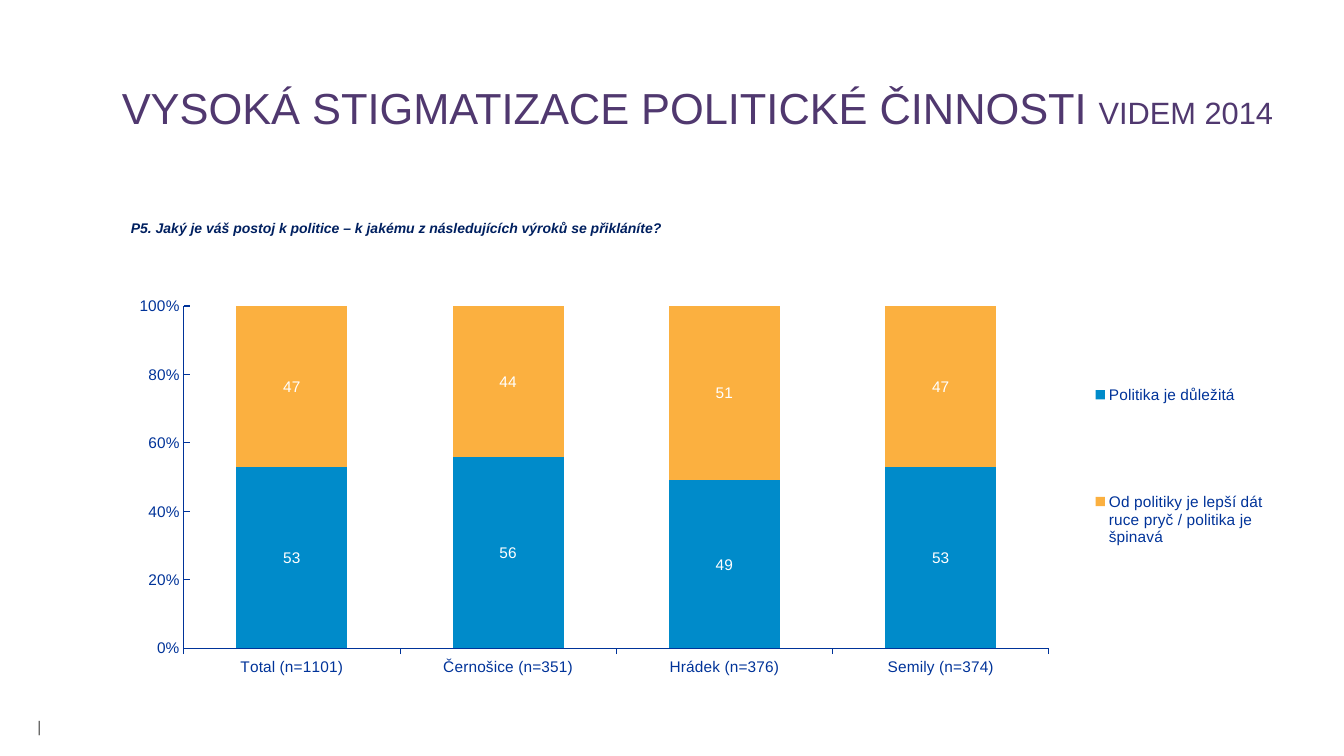
from lxml import etree
from pptx import Presentation
from pptx.chart.data import CategoryChartData
from pptx.dml.color import RGBColor
from pptx.enum.chart import XL_CHART_TYPE, XL_LABEL_POSITION, XL_LEGEND_POSITION, XL_TICK_MARK
from pptx.enum.text import MSO_ANCHOR, MSO_AUTO_SIZE, PP_ALIGN
from pptx.oxml.ns import qn
from pptx.util import Cm, Pt

# Content
TITLE_RUNS = [("VYSOKÁ STIGMATIZACE POLITICKÉ ČINNOSTI ", 31), ("VIDEM 2014", 22)]
QUESTION = "P5. Jaký je váš postoj k politice – k jakému z následujících výroků se přikláníte?"
FOOTER_MARK = "|"
TOWNS = ["Total (n=1101)", "Černošice (n=351)", "Hrádek (n=376)", "Semily (n=374)"]
ATTITUDES = [
    ("Politika je důležitá", [53, 56, 49, 53], "blue"),
    ("Od politiky je lepší dát ruce pryč / politika je špinavá", [47, 44, 51, 47], "orange"),
]

# Style
FONT = "Arial"
COLORS = {
    "title": "50386F", "question": "002060", "axis": "003399", "mark": "575756",
    "label": "FFFFFF", "blue": "008BCA", "orange": "FBB040",
}
LEFT, TOP = PP_ALIGN.LEFT, MSO_ANCHOR.TOP
MIDDLE, NO_FIT = MSO_ANCHOR.MIDDLE, MSO_AUTO_SIZE.NONE
STACKED = XL_CHART_TYPE.COLUMN_STACKED_100
TICK_IN, TICK_OUT = XL_TICK_MARK.INSIDE, XL_TICK_MARK.OUTSIDE
CENTER_LABEL = XL_LABEL_POSITION.CENTER
LEGEND_TOP = XL_LEGEND_POSITION.TOP

# Left, top, width, height in centimetres
TITLE_BOX = (3.07, 1.32, 29.34, 3.61)
QUESTION_BOX = (3.2, 5.54, 29.21, 0.53)
CHART_BOX = (2.54, 5.92, 29.87, 11.2)
MARK_BOX = (0.94, 18.06, 0.1, 0.48)
# Fractions of the chart area
PLOT_AREA = (0.07, 0.16, 0.73, 0.77)
LEGEND_AREA = (0.83, 0.14, 0.16, 0.76)


def rgb(name):
    return RGBColor.from_string(COLORS[name])


def style_font(font, size, color, bold=False, italic=False):
    font.name = FONT
    font.size = Pt(size)
    font.bold = bold
    font.italic = italic
    font.color.rgb = rgb(color)


def place(shape, box):
    shape.left, shape.top, shape.width, shape.height = (Cm(length) for length in box)


def prepare_frame(shape, anchor, margins=(0, 0, 0, 0)):
    frame = shape.text_frame
    frame.auto_size = NO_FIT
    frame.vertical_anchor = anchor
    frame.margin_left, frame.margin_top, frame.margin_right, frame.margin_bottom = (
        Cm(margin) for margin in margins)
    return frame


def set_layout(element, area, index, inner=False):
    """Give a chart part a fixed place inside the chart."""
    for old_layout in element.findall(qn("c:layout")):
        element.remove(old_layout)
    layout = etree.Element(qn("c:layout"))
    manual = etree.SubElement(layout, qn("c:manualLayout"))
    settings = [("layoutTarget", "inner")] if inner else []
    settings += [("xMode", "edge"), ("yMode", "edge")]
    settings += zip("xywh", area)
    for tag, value in settings:
        etree.SubElement(manual, qn("c:" + tag)).set("val", str(value))
    element.insert(index, layout)


def add_title(slide):
    title = slide.shapes.title
    place(title, TITLE_BOX)
    paragraph = prepare_frame(title, MIDDLE, (0, 0, 0, 0.66)).paragraphs[0]
    paragraph.alignment = LEFT
    paragraph.line_spacing = 0.9
    for text, size in TITLE_RUNS:
        run = paragraph.add_run()
        run.text = text
        style_font(run.font, size, "title")


def add_question(slide):
    body = slide.placeholders[1]
    place(body, QUESTION_BOX)
    frame = prepare_frame(body, TOP, (0.1, 0, 0.1, 0.1))
    frame.text = QUESTION
    paragraph = frame.paragraphs[0]
    paragraph.alignment = LEFT
    paragraph.space_before = Pt(0)
    properties = paragraph._p.get_or_add_pPr()
    properties.set("marL", "0")
    properties.set("indent", "0")
    etree.SubElement(properties, qn("a:buNone"))
    style_font(paragraph.runs[0].font, 10, "question", bold=True, italic=True)


def add_attitude_chart(slide):
    data = CategoryChartData(number_format="0")
    data.categories = TOWNS
    for name, values, _ in ATTITUDES:
        data.add_series(name, values)
    chart = slide.shapes.add_chart(STACKED, *(Cm(length) for length in CHART_BOX), data).chart
    style_font(chart.font, 11, "axis")
    chart.has_title = False

    # Columns
    plot = chart.plots[0]
    plot.gap_width = 95
    plot.overlap = 100
    plot.vary_by_categories = False
    for series, (_, _, color) in zip(plot.series, ATTITUDES):
        series.format.fill.solid()
        series.format.fill.fore_color.rgb = rgb(color)
        labels = series.data_labels
        labels.show_value = True
        labels.position = CENTER_LABEL
        labels.number_format = "#,##0"
        labels.number_format_is_linked = False
        style_font(labels.font, 11, "label")

    # Axes
    for axis, tick in ((chart.category_axis, TICK_OUT), (chart.value_axis, TICK_IN)):
        axis.has_major_gridlines = False
        axis.major_tick_mark = tick
        axis.format.line.color.rgb = rgb("axis")
        axis.format.line.width = Pt(0.75)
        style_font(axis.tick_labels.font, 11, "axis")
    value_axis = chart.value_axis
    value_axis.minimum_scale, value_axis.maximum_scale = 0, 1
    value_axis.major_unit = 0.2
    value_axis.tick_labels.number_format = "0%"
    value_axis.tick_labels.number_format_is_linked = False

    # Legend and plot area
    chart.has_legend = True
    legend = chart.legend
    legend.position = LEGEND_TOP
    legend.include_in_layout = False
    style_font(legend.font, 11, "axis")
    set_layout(legend._element, LEGEND_AREA, 1)
    set_layout(chart._chartSpace.chart.plotArea, PLOT_AREA, 0, inner=True)


def add_footer_mark(slide):
    box = slide.shapes.add_textbox(*(Cm(length) for length in MARK_BOX))
    frame = prepare_frame(box, TOP)
    frame.word_wrap = False
    frame.text = FOOTER_MARK
    style_font(frame.paragraphs[0].runs[0].font, 11, "mark")


def main():
    presentation = Presentation()
    presentation.slide_width = Cm(33.87)
    presentation.slide_height = Cm(19.05)
    slide = presentation.slides.add_slide(presentation.slide_layouts[1])
    add_footer_mark(slide)
    add_title(slide)
    add_attitude_chart(slide)
    add_question(slide)
    presentation.save("out.pptx")


if __name__ == "__main__":
    main()
